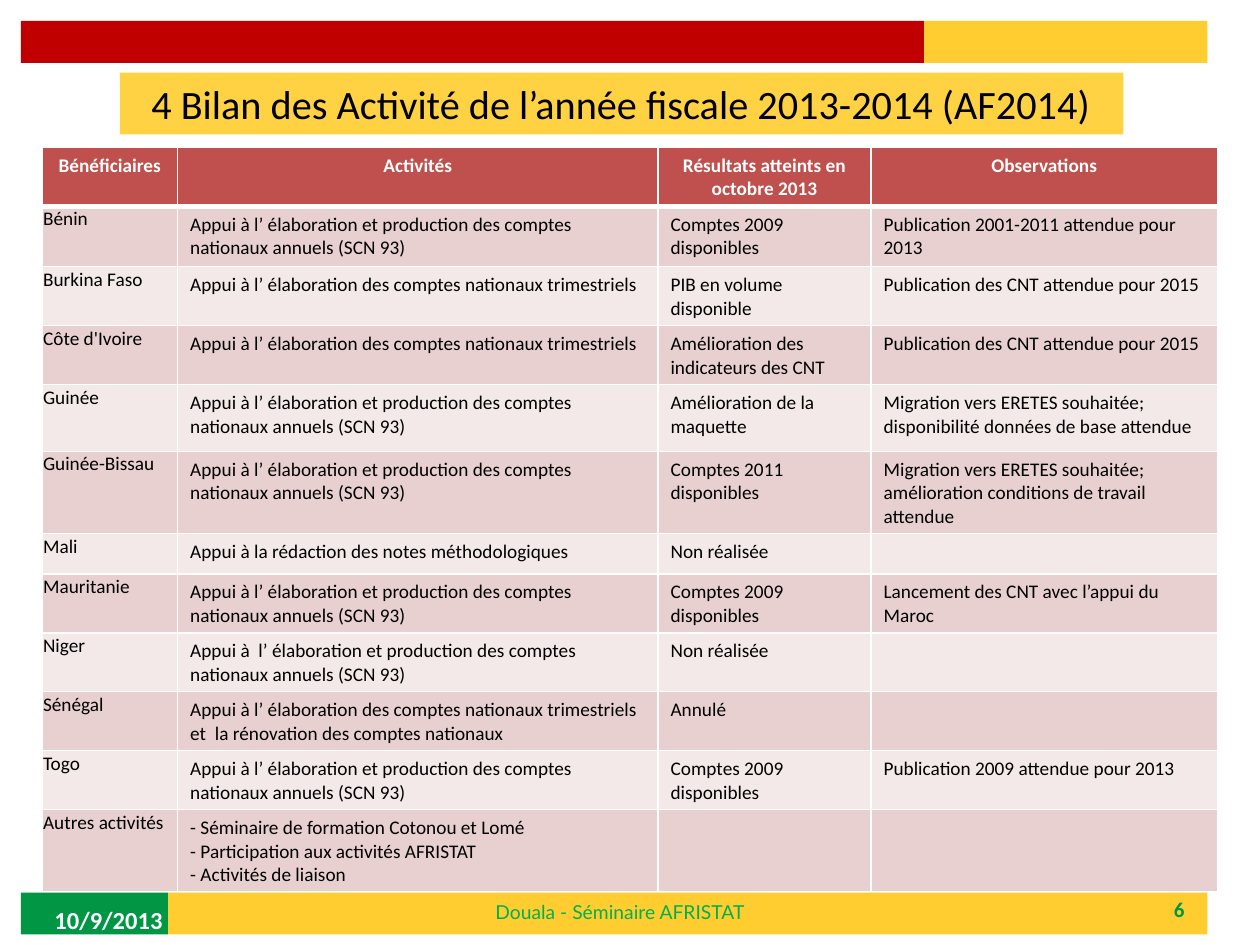
from pptx import Presentation
from pptx.dml.color import RGBColor
from pptx.enum.shapes import MSO_SHAPE as SHAPE
from pptx.enum.text import MSO_ANCHOR as ANCHOR, PP_ALIGN as ALIGN
from pptx.oxml import parse_xml
from pptx.oxml.ns import nsdecls
from pptx.util import Pt

RED = RGBColor(0xC0, 0x00, 0x00)
YELLOW = RGBColor(0xFF, 0xCD, 0x2F)
TITLE_YELLOW = RGBColor(0xFF, 0xD2, 0x43)
GREEN = RGBColor(0x00, 0x96, 0x44)
FOOTER_GREEN = RGBColor(0x00, 0xB0, 0x50)
HEADER_RED = RGBColor(0xC0, 0x50, 0x4D)
BANDS = (RGBColor(0xF4, 0xE9, 0xE9), RGBColor(0xE8, 0xD0, 0xD0))
WHITE = RGBColor(0xFF, 0xFF, 0xFF)
BLACK = RGBColor(0x00, 0x00, 0x00)

COL_WIDTHS = (77.5, 274.5, 121.75, 198)
ROW_HEIGHTS = (33.2, 34.5, 33.7, 33.7, 38.2, 47, 23, 33.7, 33.7, 33.7, 33.7, 46.7)

ANNUAL = "Appui à l’ élaboration et production des comptes nationaux annuels (SCN 93)"
QUARTERLY = "Appui à l’ élaboration des comptes nationaux trimestriels"
ACCOUNTS_2009 = "Comptes 2009 disponibles"
CNT_2015 = "Publication des CNT attendue pour 2015"
ROWS = (
    ("Bénéficiaires", "Activités", "Résultats atteints en octobre 2013", "Observations"),
    ("Bénin", ANNUAL, ACCOUNTS_2009, "Publication 2001-2011 attendue pour 2013"),
    ("Burkina Faso", QUARTERLY, "PIB en volume disponible", CNT_2015),
    ("Côte d'Ivoire", QUARTERLY, "Amélioration des indicateurs des CNT", CNT_2015),
    ("Guinée", ANNUAL, "Amélioration de la maquette",
     "Migration vers ERETES souhaitée; disponibilité données de base attendue"),
    ("Guinée-Bissau", ANNUAL, "Comptes 2011 disponibles",
     "Migration vers ERETES souhaitée; amélioration conditions de travail attendue"),
    ("Mali", "Appui à la rédaction des notes méthodologiques", "Non réalisée", ""),
    ("Mauritanie", ANNUAL, ACCOUNTS_2009, "Lancement des CNT avec l’appui du Maroc"),
    ("Niger", "Appui à  l’ élaboration et production des comptes nationaux annuels (SCN 93)",
     "Non réalisée", ""),
    ("Sénégal", QUARTERLY + " et  la rénovation des comptes nationaux", "Annulé", ""),
    ("Togo", ANNUAL, ACCOUNTS_2009, "Publication 2009 attendue pour 2013"),
    ("Autres activités", "- Séminaire de formation Cotonou et Lomé\n"
     "- Participation aux activités AFRISTAT\n- Activités de liaison", "", ""),
)


def write(tf, text, size=11, font="Calibri", color=BLACK, bold=False, align=ALIGN.LEFT):
    """Fill a text frame, one paragraph per line of text."""
    for i, line in enumerate(text.split("\n")):
        p = tf.add_paragraph() if i else tf.paragraphs[0]
        p.alignment = align
        if not line:  # keeps empty cells from growing their row
            p._p.append(parse_xml(f'<a:endParaRPr {nsdecls("a")} sz="{size * 100}"/>'))
            continue
        r = p.add_run()
        r.text = line
        r.font.size, r.font.name, r.font.bold = Pt(size), font, bold
        r.font.color.rgb = color


def add_bar(s, left, top, width, height, color):
    sp = s.shapes.add_shape(SHAPE.RECTANGLE, Pt(left), Pt(top), Pt(width), Pt(height))
    sp.shadow.inherit = False
    sp.fill.solid()
    sp.fill.fore_color.rgb = color
    sp.line.fill.background()
    return sp


def add_text(s, left, top, width, height, text, wrap=True, anchor=ANCHOR.MIDDLE, **fmt):
    tf = s.shapes.add_textbox(Pt(left), Pt(top), Pt(width), Pt(height)).text_frame
    tf.word_wrap = wrap
    tf.vertical_anchor = anchor
    write(tf, text, **fmt)


def set_borders(cell, bottom):
    """White borders of 1 pt, with the given bottom width."""
    tcPr = cell._tc.get_or_add_tcPr()
    for i, (side, width) in enumerate(zip("LRTB", (1, 1, 1, bottom))):
        tcPr.insert(i, parse_xml(
            f'<a:ln{side} {nsdecls("a")} w="{Pt(width)}"><a:solidFill>'
            f'<a:srgbClr val="{WHITE}"/></a:solidFill></a:ln{side}>'))


def add_activity_table(s, left, top):
    table = s.shapes.add_table(len(ROWS), len(COL_WIDTHS), Pt(left), Pt(top),
                               Pt(sum(COL_WIDTHS)), Pt(sum(ROW_HEIGHTS))).table
    for col, width in zip(table.columns, COL_WIDTHS):
        col.width = Pt(width)
    for i, (row, height) in enumerate(zip(table.rows, ROW_HEIGHTS)):
        row.height = Pt(height)
        header = i == 0
        for j, (cell, text) in enumerate(zip(row.cells, ROWS[i])):
            cell.fill.solid()
            cell.fill.fore_color.rgb = HEADER_RED if header else BANDS[i % 2]
            set_borders(cell, bottom=3 if header else 1)
            if header:
                write(cell.text_frame, text, color=WHITE, bold=True, align=ALIGN.CENTER)
                continue
            if j == 0:
                cell.margin_left = cell.margin_right = cell.margin_top = Pt(0.6)
                cell.margin_bottom = Pt(0)
            write(cell.text_frame, text)


def main():
    prs = Presentation()
    prs.slide_width, prs.slide_height = Pt(720), Pt(540)
    s = prs.slides.add_slide(prs.slide_layouts[6])

    # Footer and header bands
    add_bar(s, 12, 510, 84, 24, GREEN)
    add_bar(s, 96, 510, 594, 24, YELLOW)
    add_bar(s, 12, 12, 516, 24, RED)
    add_bar(s, 528, 12, 162, 24, YELLOW)

    # Page number, date and event
    add_text(s, 516, 510, 168, 19.5, "6", size=12, color=GREEN, bold=True, align=ALIGN.RIGHT)
    add_text(s, 24, 511.5, 168, 28.5, "10/9/2013", size=14, color=WHITE, bold=True)
    add_text(s, 276, 511, 160.5, 20.6, "Douala - Séminaire AFRISTAT", wrap=False,
             anchor=ANCHOR.TOP, font="Lato", color=FOOTER_GREEN)

    # Title
    title = add_bar(s, 68.5, 41.5, 573.5, 35.3, TITLE_YELLOW)
    title.text_frame.word_wrap = True
    title.text_frame.vertical_anchor = ANCHOR.TOP
    write(title.text_frame, "4 Bilan des Activité de l’année fiscale 2013-2014 (AF2014)",
          size=23, align=ALIGN.CENTER)

    add_activity_table(s, 24, 84.25)
    prs.save("out.pptx")


if __name__ == "__main__":
    main()
